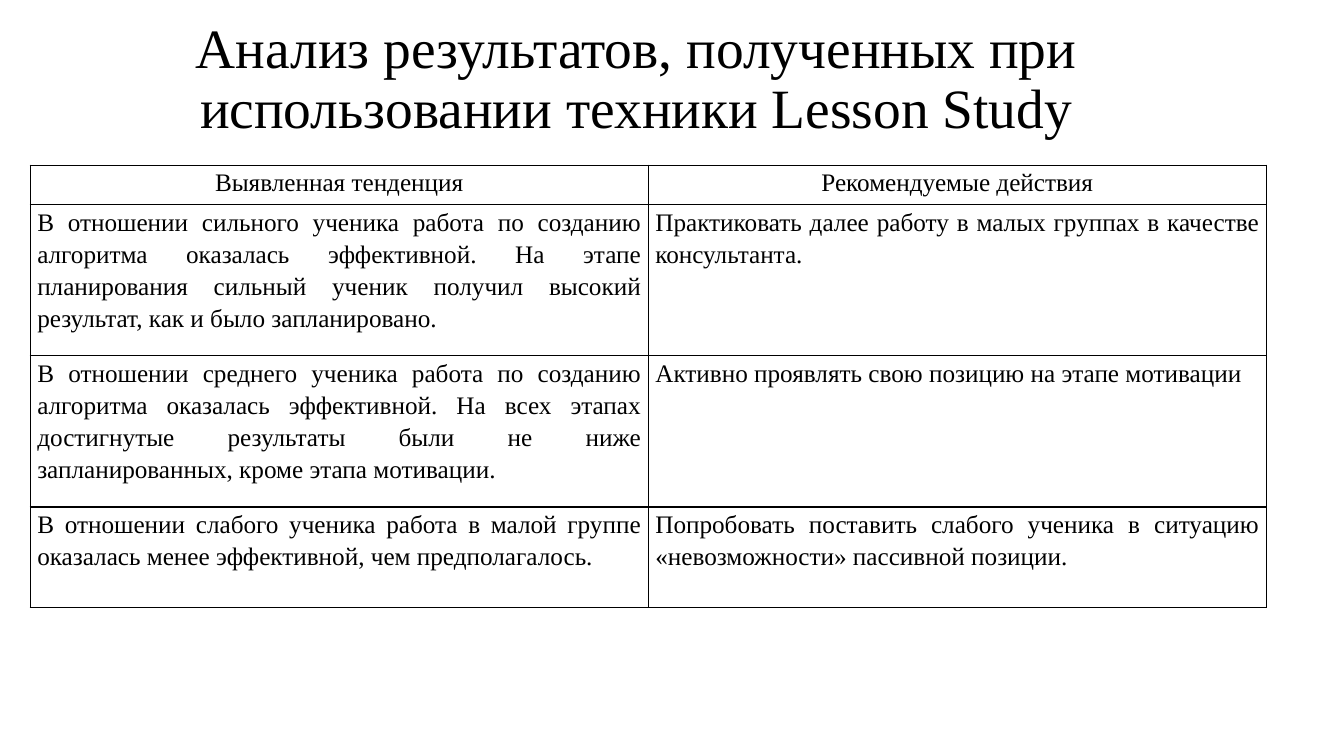
import dataclasses

import pptx
import pptx.dml.color
import pptx.enum.text
import pptx.oxml
import pptx.oxml.ns
import pptx.util

Inches = pptx.util.Inches
Align = pptx.enum.text.PP_ALIGN
Anchor = pptx.enum.text.MSO_ANCHOR
COLORS = {"text": "000000", "line": "000000"}
FONT = "Times New Roman"


@dataclasses.dataclass
class Row:
    trend: str
    action: str
    height: float
    align: Align = Align.JUSTIFY


TITLE = "Анализ результатов, полученных при использовании техники Lesson Study"
ROWS = [
    Row("Выявленная тенденция", "Рекомендуемые действия", 0.39, Align.CENTER),
    Row("В отношении сильного ученика работа по созданию алгоритма оказалась "
        "эффективной. На этапе планирования сильный ученик получил высокий "
        "результат, как и было запланировано.",
        "Практиковать далее работу в малых группах в качестве консультанта.", 1.5),
    Row("В отношении среднего ученика работа по созданию алгоритма оказалась "
        "эффективной. На всех этапах достигнутые результаты были не ниже "
        "запланированных, кроме этапа мотивации.",
        "Активно проявлять свою позицию на этапе мотивации", 1.5),
    Row("В отношении слабого ученика работа в малой группе оказалась менее "
        "эффективной, чем предполагалось.",
        "Попробовать поставить слабого ученика в ситуацию «невозможности» "
        "пассивной позиции.", 1),
]


def write(frame, text: str, size: float, align: Align, space: float) -> None:
    par = frame.paragraphs[0]
    par.alignment = align
    par.line_spacing = space
    run = par.add_run()
    run.text = text
    run.font.name = FONT
    run.font.size = pptx.util.Pt(size)
    run.font.color.rgb = pptx.dml.color.RGBColor.from_string(COLORS["text"])


def border(cell) -> None:
    props = cell._tc.get_or_add_tcPr()
    # Border lines come before the fill
    for place, side in enumerate(("lnL", "lnR", "lnT", "lnB")):
        line = pptx.oxml.parse_xml(
            f'<a:{side} {pptx.oxml.ns.nsdecls("a")} w="{pptx.util.Pt(1)}">'
            f'<a:solidFill><a:srgbClr val="{COLORS["line"]}"/></a:solidFill>'
            f'</a:{side}>')
        props.insert(place, line)


def fill_cell(cell, text: str, align: Align) -> None:
    cell.margin_left = cell.margin_right = Inches(0.07)
    cell.margin_top = cell.margin_bottom = 0
    cell.fill.background()
    border(cell)
    write(cell.text_frame, text, 18, align, 1.15)


def add_title(slide) -> None:
    title = slide.shapes.title
    title.left, title.top = Inches(0.2), Inches(0.4)
    title.width, title.height = Inches(12.22), Inches(1.45)
    frame = title.text_frame
    frame.word_wrap = True
    frame.auto_size = pptx.enum.text.MSO_AUTO_SIZE.NONE
    frame.vertical_anchor = Anchor.MIDDLE
    # The deep lower inset lifts the text clear of the table
    frame.margin_top, frame.margin_bottom = Inches(0), Inches(0.65)
    write(frame, TITLE, 39.6, Align.CENTER, 0.9)


def add_grid(slide) -> None:
    height = sum(row.height for row in ROWS)
    grid = slide.shapes.add_table(
        len(ROWS), 2, Inches(0.3), Inches(1.64), Inches(12.26), Inches(height)).table
    grid.first_row = grid.horz_banding = False
    for line, row in zip(grid.rows, ROWS):
        line.height = Inches(row.height)
        for cell, text in zip(line.cells, (row.trend, row.action)):
            fill_cell(cell, text, row.align)


def main() -> None:
    deck = pptx.Presentation()
    deck.slide_width, deck.slide_height = Inches(13.33), Inches(7.5)
    slide = deck.slides.add_slide(deck.slide_layouts.get_by_name("Title Only"))
    add_title(slide)
    add_grid(slide)
    deck.save("out.pptx")


if __name__ == "__main__":
    main()
